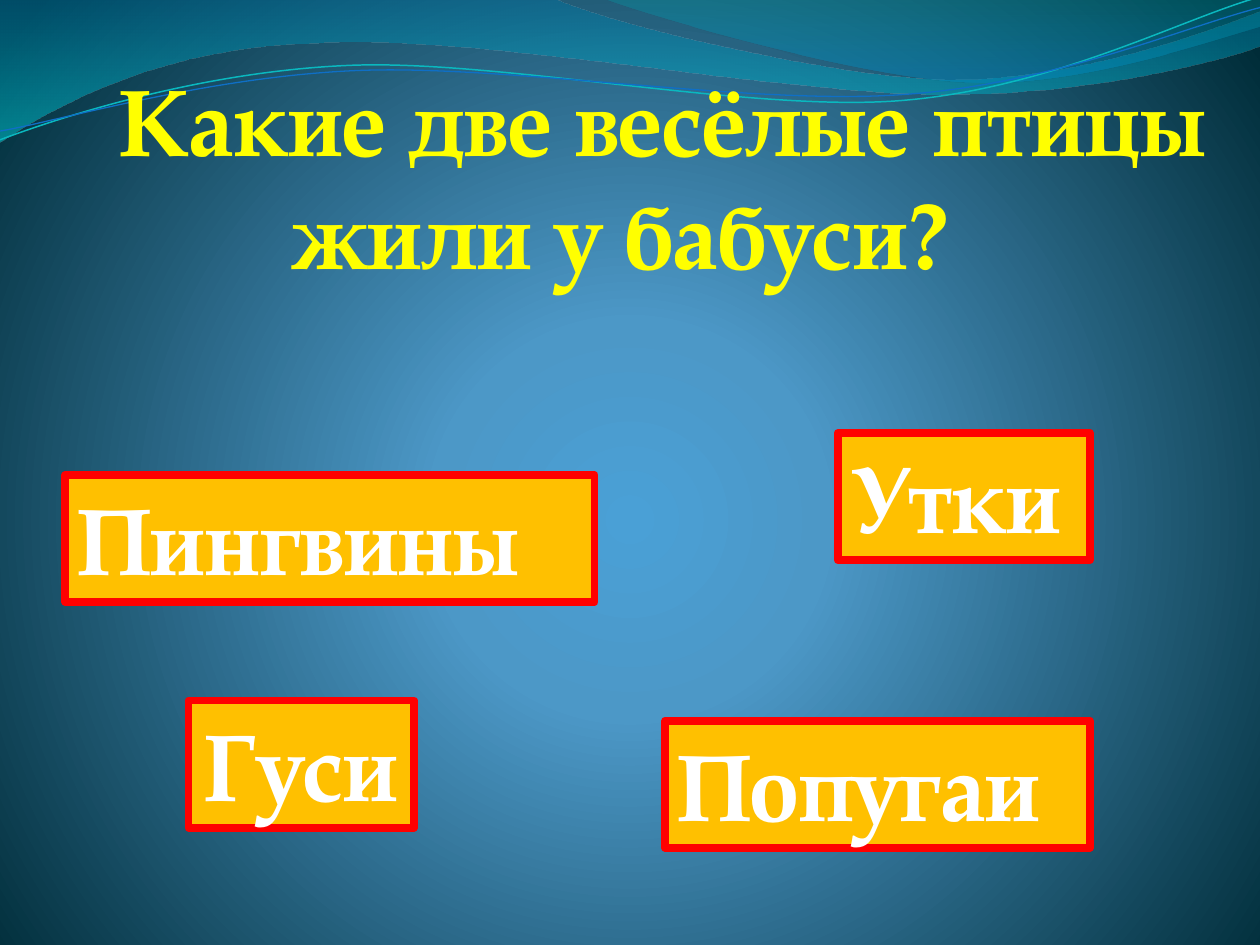
from dataclasses import dataclass

from lxml.etree import SubElement
from pptx import Presentation
from pptx.dml.color import RGBColor
from pptx.enum.shapes import MSO_SHAPE
from pptx.enum.text import MSO_ANCHOR, MSO_AUTO_SIZE, PP_ALIGN
from pptx.oxml.ns import qn
from pptx.util import Pt

FONT = "TeX Gyre Pagella"
TEXT_SIZE = Pt(54)
WHITE = RGBColor(0xFF, 0xFF, 0xFF)
YELLOW = RGBColor(0xFF, 0xFF, 0x00)
AMBER = RGBColor(0xFF, 0xC0, 0x00)
RED = RGBColor(0xFF, 0x00, 0x00)
TURQUOISE = RGBColor(0x0A, 0xB8, 0xBF)
BLUE = RGBColor(0x0F, 0x6F, 0xC6)
SKY = RGBColor(0x4A, 0xA0, 0xD6)
STEEL = RGBColor(0x4C, 0x98, 0xC7)
DEEP = RGBColor(0x00, 0x2C, 0x38)
OCEAN = RGBColor(0x00, 0x74, 0xA1)
LAGOON = RGBColor(0x00, 0xC6, 0xCF)
TEAL = RGBColor(0x00, 0xA1, 0xA9)
AZURE = RGBColor(0x00, 0x8B, 0xBF)


@dataclass(frozen=True)
class Stop:
    position: int
    color: RGBColor
    opacity: int = 100


@dataclass(frozen=True)
class Wave:
    """Steps hold one point for a straight line, three for a Bezier curve."""
    start: tuple
    steps: tuple
    stops: tuple = ()
    line_color: RGBColor | None = None
    line_width: float = 0


@dataclass(frozen=True)
class Answer:
    text: str
    left: float
    top: float
    width: float
    align: PP_ALIGN = PP_ALIGN.LEFT
    height: float = 72.7


WAVES = (
    Wave((0, 0), (
        (316.8, -0.7),
        (342.7, 12.2, 478.1, 45.4, 545.8, 45.4),
        (614.2, 45.4, 689.8, 18.7, 720, 6.5),
        (720.7, 25.9),
        (707.8, 31.7, 626.4, 54.7, 537.1, 54),
        (447.8, 54, 275, 20.2, 185, 24.5),
        (92.9, 25.9, 33.1, 59.8, -0.7, 81.4),
        (0, 0),
    ), stops=(Stop(0, OCEAN, 45), Stop(100, LAGOON, 55))),
    Wave((344.9, -0.7), (
        (366.5, 7.9, 491, 44.6, 553.7, 46.8),
        (616.3, 49.7, 691.9, 23, 720, 15.1),
        (720, 0),
        (344.9, -0.7),
    ), stops=(Stop(0, TEAL, 30), Stop(80, AZURE, 45))),
    Wave((0, 79.9), (
        (34.6, 67, 113.8, 41, 199.4, 37.4),
        (284.4, 33.8, 427, 64.1, 513.4, 57.6),
        (599.8, 51.1, 675.4, 10.8, 718.6, -1.4),
    ), line_color=TURQUOISE, line_width=0.85),
    Wave((0, 74.9), (
        (33.8, 69.1, 118.1, 43.9, 203.8, 40.3),
        (290.2, 36.7, 429.8, 60.5, 516.2, 54),
        (601.9, 48.2, 677.5, 15.1, 720, 4.3),
    ), line_color=BLUE, line_width=0.75),
)

ANSWERS = (
    Answer("Пингвины", 37.4, 271.4, 302.4),
    Answer("Гуси", 107.7, 400.3, 128.9, PP_ALIGN.CENTER),
    Answer("Утки", 478.8, 247.4, 144),
    Answer("Попугаи", 380.2, 411.8, 242.6),
)


def set_gradient(fill, stops: tuple, radial: bool = False) -> None:
    """Replace the stops and direction of a gradient fill."""
    fill.gradient()
    gradient = fill._fill._gradFill
    for child in list(gradient):
        gradient.remove(child)
    stop_list = SubElement(gradient, qn("a:gsLst"))
    for stop in stops:
        entry = SubElement(stop_list, qn("a:gs"), pos=str(stop.position * 1000))
        color = SubElement(entry, qn("a:srgbClr"), val=str(stop.color))
        if stop.opacity < 100:
            SubElement(color, qn("a:alpha"), val=str(stop.opacity * 1000))
    if radial:
        shade = SubElement(gradient, qn("a:path"))
        shade.set("path", "circle")
        SubElement(shade, qn("a:fillToRect"),
                   l="10000", t="110000", r="10000", b="100000")
    else:
        SubElement(gradient, qn("a:lin"), ang="5400000", scaled="1")


def bend_segments(shape, steps: tuple) -> None:
    """Merge each three straight segments of a curved step into one Bezier."""
    segments = iter(list(shape.element.iter(qn("a:lnTo"))))
    for step in steps:
        first = next(segments)
        if len(step) == 2:
            continue
        first.tag = qn("a:cubicBezTo")
        for segment in (next(segments), next(segments)):
            first.append(segment[0])
            segment.getparent().remove(segment)


def draw_wave(page, wave: Wave) -> None:
    points = [(Pt(x), Pt(y)) for step in wave.steps
              for x, y in zip(step[::2], step[1::2])]
    builder = page.shapes.build_freeform(Pt(wave.start[0]), Pt(wave.start[1]))
    builder.add_line_segments(points, close=bool(wave.stops))
    shape = builder.convert_to_shape()
    bend_segments(shape, wave.steps)
    shape.shadow.inherit = False
    if wave.stops:
        set_gradient(shape.fill, wave.stops)
        shape.line.fill.background()
    else:
        shape.fill.background()
        shape.line.color.rgb = wave.line_color
        shape.line.width = Pt(wave.line_width)


def add_span(para, text: str, color: RGBColor) -> None:
    span = para.add_run()
    span.text = text
    span.font.name = FONT
    span.font.size = TEXT_SIZE
    span.font.bold = True
    span.font.color.rgb = color


def draw_title(page) -> None:
    title = page.shapes.title
    page.shapes.element.append(title.element)  # bring in front of the waves
    title.left, title.top = Pt(18.5), Pt(31.7)
    title.width, title.height = Pt(672), Pt(239.8)
    frame = title.text_frame
    frame.word_wrap = True
    frame.auto_size = MSO_AUTO_SIZE.NONE
    frame.vertical_anchor = MSO_ANCHOR.TOP
    frame.margin_left = frame.margin_right = 0
    para = frame.paragraphs[0]
    para.alignment = PP_ALIGN.CENTER
    para.space_before = Pt(0)
    properties = para._p.get_or_add_pPr()
    properties.set("marL", "0")
    properties.set("indent", str(Pt(48)))
    add_span(para, "Какие две весёлые птицы жили у бабуси?", YELLOW)


def draw_answer(page, answer: Answer) -> None:
    box = page.shapes.add_shape(MSO_SHAPE.RECTANGLE, Pt(answer.left), Pt(answer.top),
                                Pt(answer.width), Pt(answer.height))
    box.shadow.inherit = False
    box.fill.solid()
    box.fill.fore_color.rgb = AMBER
    box.line.color.rgb = RED
    box.line.width = Pt(4.5)
    frame = box.text_frame
    frame.word_wrap = True
    frame.vertical_anchor = MSO_ANCHOR.TOP
    para = frame.paragraphs[0]
    para.alignment = answer.align
    add_span(para, answer.text, WHITE)


def main() -> None:
    deck = Presentation()
    deck.slide_width, deck.slide_height = Pt(720), Pt(540)
    page = deck.slides.add_slide(deck.slide_layouts[5])
    set_gradient(page.background.fill,
                 (Stop(0, SKY), Stop(25, STEEL), Stop(100, DEEP)), radial=True)
    for wave in WAVES:
        draw_wave(page, wave)
    draw_title(page)
    for answer in ANSWERS:
        draw_answer(page, answer)
    deck.save("out.pptx")


if __name__ == "__main__":
    main()
